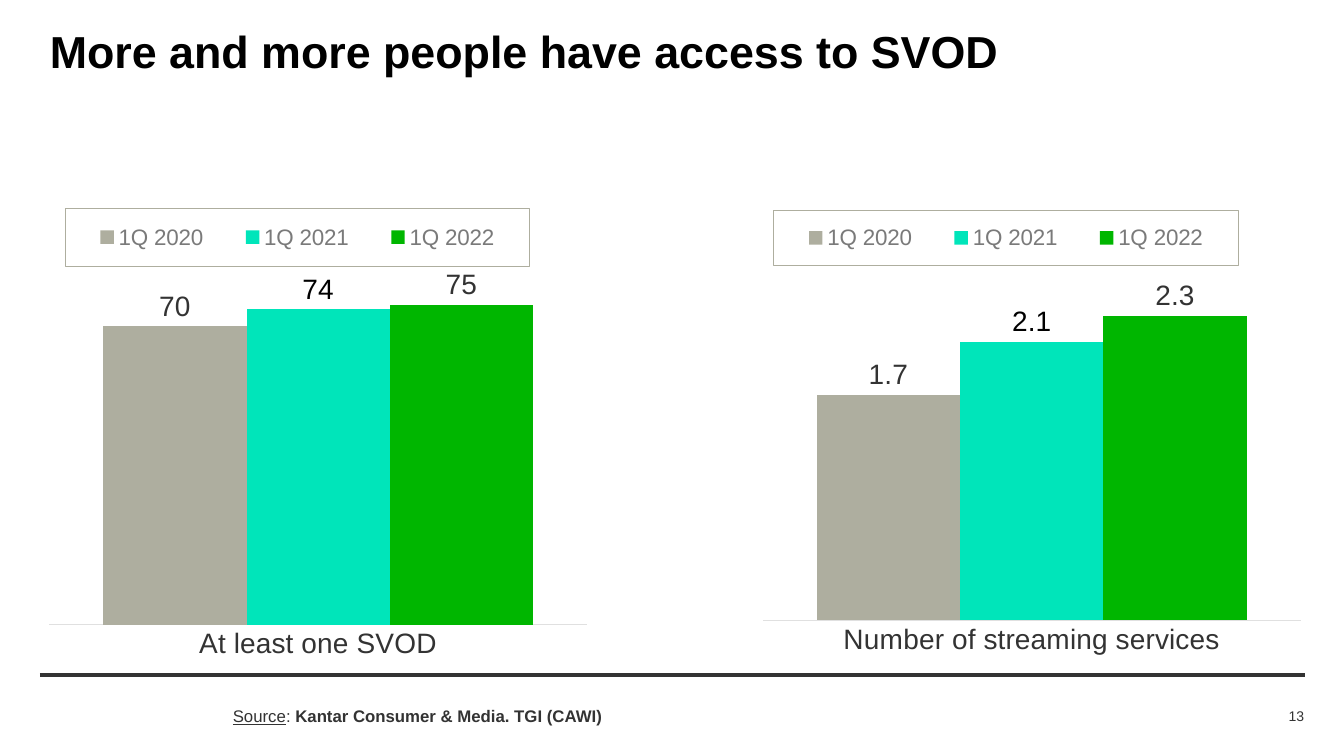
import pptx
import pptx.chart.data
import pptx.dml.color
import pptx.enum.chart
import pptx.enum.text
import pptx.oxml
import pptx.util
from pptx.util import Pt

DARK, GREY = "333333", "AEAE9F"
QUARTERS = ["1Q 2020", "1Q 2021", "1Q 2022"]
BAR_COLORS = [GREY, "00E5BA", "00B600"]
LABEL_COLORS = [DARK, "000000", DARK]
NS = ('xmlns:c="http://schemas.openxmlformats.org/drawingml/2006/chart" '
      'xmlns:a="http://schemas.openxmlformats.org/drawingml/2006/main"')


def rgb(color):
    return pptx.dml.color.RGBColor.from_string(color)


def add_text(text, left, top, width, height, size, color=DARK, bold_text="",
             underlined="", align="LEFT", margins=(0, 0)):
    """Add a one-line box: underlined, plain and bold spans in that order."""
    box = page.shapes.add_textbox(Pt(left), Pt(top), Pt(width), Pt(height))
    frame = box.text_frame
    frame.word_wrap = True
    frame.vertical_anchor = pptx.enum.text.MSO_ANCHOR.MIDDLE
    frame.margin_left = frame.margin_right = Pt(margins[0])
    frame.margin_top = frame.margin_bottom = Pt(margins[1])
    para = frame.paragraphs[0]
    para.alignment = pptx.enum.text.PP_ALIGN[align]
    for words, underline, bold in ((underlined, True, False), (text, False, False),
                                   (bold_text, False, True)):
        if words:
            span = para.add_run()
            span.text = words
            font = span.font
            font.name, font.size, font.bold, font.underline = "Arial", Pt(size), bold, underline
            font.color.rgb = rgb(color)


deck = pptx.Presentation()
deck.slide_width, deck.slide_height = Pt(960), Pt(540)
page = deck.slides.add_slide(deck.slide_layouts[6])

rule = page.shapes.add_connector(pptx.enum.shapes.MSO_CONNECTOR.STRAIGHT,
                                 Pt(28.5), Pt(482), Pt(932), Pt(482))
rule.line.color.rgb = rgb(DARK)
rule.line.width = Pt(3)
rule._element.spPr.append(pptx.oxml.parse_xml(f"<a:effectLst {NS}/>"))

add_text("", 28.5, 4.5, 905, 63, 32, color="000000",
         bold_text="More and more people have access to SVOD", margins=(7.2, 3.6))
add_text(": ", 166.3, 504, 510, 15, 12, underlined="Source",
         bold_text="Kantar Consumer & Media. TGI (CAWI)")
add_text("13", 855, 504, 76.5, 14.5, 10, align="RIGHT")

# category, values, top, left, height, axis maximum, step, format, plot height, legend x and y
charts = [
    ("Number of streaming services", [1.7, 2.1, 2.3], 149.8, 540.7, 324.7,
     3, 0.5, "0.0", 0.874, 0.031, 0.002),
    ("At least one SVOD", [70, 74, 75], 131.8, 31, 344.9,
     100, 25, "0", 0.883, 0.04, 0.049),
]
for (category, values, top, left, height, maximum, step, number_format,
     plot_height, legend_x, legend_y) in charts:
    data = pptx.chart.data.CategoryChartData(number_format=number_format)
    data.categories = [category]
    for quarter, value in zip(QUARTERS, values):
        data.add_series(quarter, [value])
    chart = page.shapes.add_chart(pptx.enum.chart.XL_CHART_TYPE.COLUMN_CLUSTERED,
                                  Pt(left), Pt(top), Pt(391), Pt(height), data).chart
    chart.has_title = False
    chart.has_legend = True
    chart.legend.position = pptx.enum.chart.XL_LEGEND_POSITION.RIGHT
    chart.legend.include_in_layout = False

    plot = chart.plots[0]
    plot.gap_width, plot.overlap = 75, 0
    plot.vary_by_categories = False

    value_axis = chart.value_axis
    value_axis.minimum_scale, value_axis.maximum_scale = 0, maximum
    value_axis.major_unit = step
    value_axis.has_major_gridlines = False
    value_axis.visible = False
    category_axis = chart.category_axis
    category_axis.major_tick_mark = pptx.enum.chart.XL_TICK_MARK.NONE
    category_axis.format.line.color.rgb = rgb("E0E0E0")
    category_axis.format.line.width = Pt(0.75)

    fonts = [(chart.font, 16, DARK), (chart.legend.font, 16, "7A7A7A"),
             (category_axis.tick_labels.font, 20, DARK)]
    for series, bar_color, label_color in zip(plot.series, BAR_COLORS, LABEL_COLORS):
        series.format.fill.solid()
        series.format.fill.fore_color.rgb = rgb(bar_color)
        labels = series.data_labels
        labels.show_value = True
        labels.position = pptx.enum.chart.XL_LABEL_POSITION.OUTSIDE_END
        labels.number_format, labels.number_format_is_linked = number_format, False
        fonts.append((labels.font, 20, label_color))
    for font, size, color in fonts:
        font.name, font.size, font.bold = "Arial", Pt(size), False
        font.color.rgb = rgb(color)

    legend = chart._chartSpace.xpath("c:chart/c:legend")[0]
    area = chart._chartSpace.xpath("c:chart/c:plotArea")[0]
    overlay = legend.xpath("c:overlay")[0]
    for parent, target, frame in (
            (area, '<c:layoutTarget val="inner"/>', (0.011, 0.029, 0.982, plot_height)),
            (legend, "", (legend_x, legend_y, 0.848, 0.12))):
        for old in parent.xpath("c:layout"):
            parent.remove(old)
        sizes = "".join(f'<c:{side} val="{share}"/>' for side, share in zip("xywh", frame))
        layout = pptx.oxml.parse_xml(
            f'<c:layout {NS}><c:manualLayout>{target}<c:xMode val="edge"/>'
            f'<c:yMode val="edge"/>{sizes}</c:manualLayout></c:layout>')
        if parent is area:
            area.insert(0, layout)
        else:
            overlay.addprevious(layout)
    overlay.addnext(pptx.oxml.parse_xml(
        f'<c:spPr {NS}><a:noFill/><a:ln w="9525"><a:solidFill><a:srgbClr val="{GREY}"/>'
        '</a:solidFill></a:ln></c:spPr>'))

deck.save("out.pptx")
